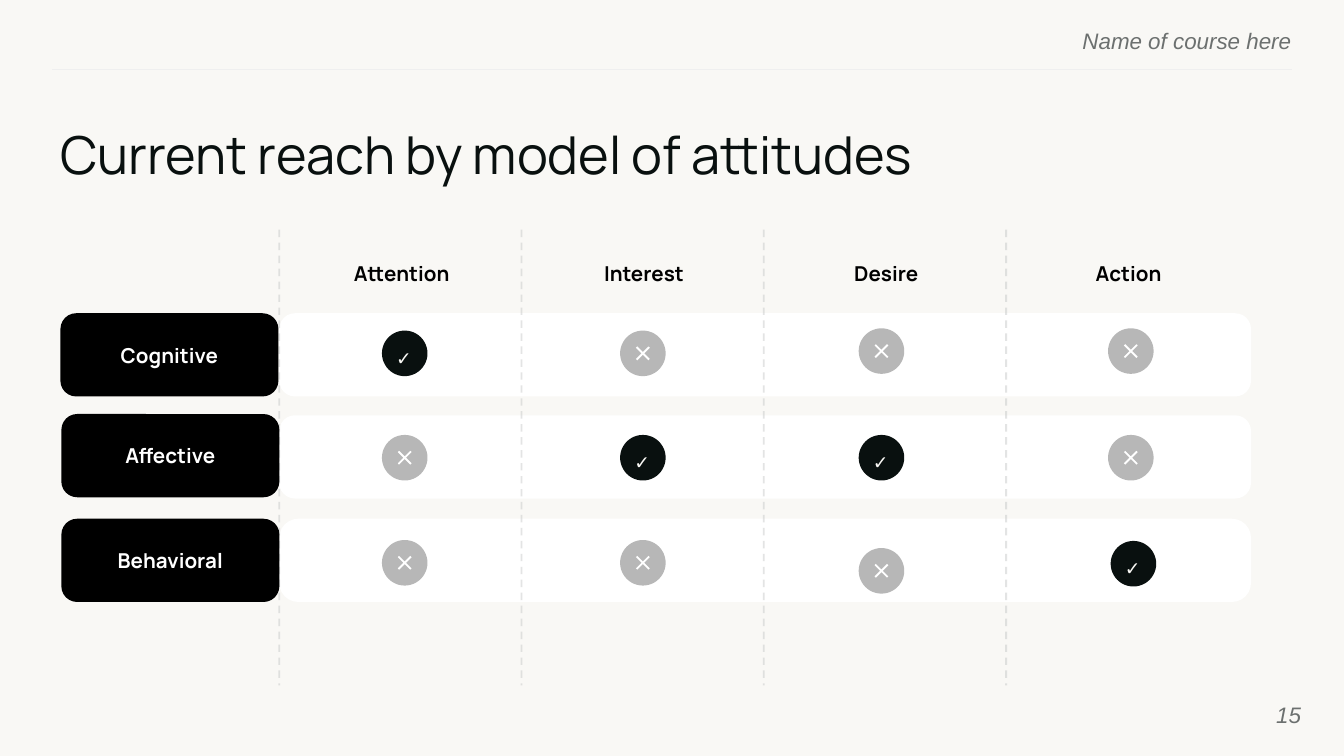
from lxml import etree
from pptx import Presentation
from pptx.dml.color import RGBColor
from pptx.enum.dml import MSO_LINE
from pptx.enum.shapes import MSO_CONNECTOR, MSO_SHAPE
from pptx.enum.text import MSO_ANCHOR, PP_ALIGN
from pptx.oxml.ns import qn
from pptx.util import Pt

ROUNDED, OVAL = MSO_SHAPE.ROUNDED_RECTANGLE, MSO_SHAPE.OVAL
STRAIGHT, DASH = MSO_CONNECTOR.STRAIGHT, MSO_LINE.DASH
LEFT, CENTER, RIGHT = PP_ALIGN.LEFT, PP_ALIGN.CENTER, PP_ALIGN.RIGHT
TOP, MIDDLE = MSO_ANCHOR.TOP, MSO_ANCHOR.MIDDLE
color = RGBColor.from_string

PAPER, WHITE, BLACK, INK = "F9F8F5", "FFFFFF", "000000", "09100F"
FOOTNOTE = {"name": "Arial", "size": Pt(12), "italic": True}
TITLE = {"name": "Manrope", "size": Pt(28)}
LABEL = {"name": "Manrope", "size": Pt(11), "bold": True}
TICK = {"name": "Arial", "size": Pt(10), "bold": True}

deck = Presentation()
deck.slide_width, deck.slide_height = Pt(720), Pt(405)
page = deck.slides.add_slide(deck.slide_layouts[6])
page.background.fill.solid()
page.background.fill.fore_color.rgb = color(PAPER)
shapes = page.shapes


def write(box, text, formats, text_color, align, anchor=MIDDLE, inset=0):
    """Fill a shape's text frame with one paragraph and return it."""
    frame = box.text_frame
    frame.word_wrap = True
    frame.vertical_anchor = anchor
    for side in ("left", "top", "right", "bottom"):
        setattr(frame, f"margin_{side}", Pt(inset))
    para = frame.paragraphs[0]
    para.alignment = align
    span = para.add_run()
    span.text = text
    for name, value in formats.items():
        setattr(span.font, name, value)
    span.font.color.rgb = color(text_color)
    return para


def paint(shape, fill):
    """Give a shape a flat fill with no outline or shadow."""
    shape.shadow.inherit = False
    shape.fill.solid()
    shape.fill.fore_color.rgb = color(fill)
    shape.line.fill.background()


# Header, title and page number
for text, bounds, formats, text_color, align, anchor in [
    ("Name of course here", (414.7, 14.4, 277.2, 13), FOOTNOTE, "6C706F", RIGHT, TOP),
    ("Current reach by model of attitudes", (32.4, 65.5, 664.6, 36.7), TITLE, INK, LEFT, TOP),
    ("15", (653.8, 367.2, 43.2, 31), FOOTNOTE, "6C706F", RIGHT, MIDDLE),
]:
    box = shapes.add_textbox(*map(Pt, bounds))
    write(box, text, formats, text_color, align, anchor)

# Row bands
band_tops = [167.8, 222.5, 277.9]
for top, corner in zip(band_tops, [0.19, 0.19, 0.23]):
    band = shapes.add_shape(ROUNDED, Pt(149.6), Pt(top), Pt(520.6), Pt(44.6))
    band.adjustments[0] = corner
    paint(band, WHITE)

# Header rule and dashed column lines
column_width = 129.8
column_lefts = [149.6 + column_width * column for column in range(4)]
rules = [(28.1, 37.4, 691.9, 37.4, "EFEFEF", 0.75, None)]
rules += [(x, 123.1, x, 367.2, "B5B7B7", 1, DASH) for x in column_lefts]
for x1, y1, x2, y2, line_color, width, dash in rules:
    rule = shapes.add_connector(STRAIGHT, Pt(x1), Pt(y1), Pt(x2), Pt(y2))
    rule.line.color.rgb = color(line_color)
    rule.line.width = Pt(width)
    properties = rule._element.spPr
    if dash:
        rule.line.dash_style = dash
        rgb = next(properties.iter(qn("a:srgbClr")))
        etree.SubElement(rgb, qn("a:alpha"), val="36000")
    etree.SubElement(properties, qn("a:effectLst"))

# Column and row labels
for label, left in zip(["Attention", "Interest", "Desire", "Action"], column_lefts):
    heading = shapes.add_textbox(Pt(left + 0.7), Pt(137.5), Pt(column_width), Pt(18))
    write(heading, label, LABEL, BLACK, CENTER, inset=1.4)

for label, left, top in zip(
    ["Cognitive", "Affective", "Behavioral"], [32.4, 32.9, 32.9], [167.8, 221.8, 277.9]
):
    card = shapes.add_shape(ROUNDED, Pt(left), Pt(top), Pt(116.8), Pt(44.6))
    card.adjustments[0] = 0.19
    paint(card, BLACK)
    write(card, label, LABEL, WHITE, CENTER, inset=1.4)

# Marks: reached (tick) or not reached (cross)
disc_size = 24.4
disc_lefts = [204.6, 332.2, 460, 593.6]
disc_tops = [177.1, 233, 289.3]
nudges = {(0, 2): (0, -1.2), (0, 3): (0, -1.2), (2, 2): (0, 4.3), (2, 3): (1.4, 0.5)}
reached = {(0, 0), (1, 1), (1, 2), (2, 3)}
cross_outline = [
    (3.7, -3), (3, -3.7), (0, -0.7), (-3, -3.7), (-3.7, -3), (-0.7, 0),
    (-3.7, 3), (-3, 3.7), (0, 0.7), (3, 3.7), (3.7, 3), (0.7, 0),
]
for row, disc_top in enumerate(disc_tops):
    for column, disc_left in enumerate(disc_lefts):
        dx, dy = nudges.get((row, column), (0, 0))
        left, top = disc_left + dx, disc_top + dy
        disc = shapes.add_shape(OVAL, Pt(left), Pt(top), Pt(disc_size), Pt(disc_size))
        if (row, column) in reached:
            paint(disc, INK)
            tick = shapes.add_textbox(Pt(left + 4.8), Pt(top + 3.9), Pt(17.3), Pt(31.7))
            para = write(tick, "✓", TICK, PAPER, LEFT, TOP, inset=2.9)
            para.line_spacing = 1.15
            para.space_before = Pt(3)
        else:
            paint(disc, "B7B7B7")
            x, y = left + disc_size / 2, top + disc_size / 2
            corners = [(Pt(x + across), Pt(y + down)) for across, down in cross_outline]
            builder = shapes.build_freeform(*corners[0])
            builder.add_line_segments(corners[1:], close=True)
            paint(builder.convert_to_shape(), WHITE)

deck.save("out.pptx")
